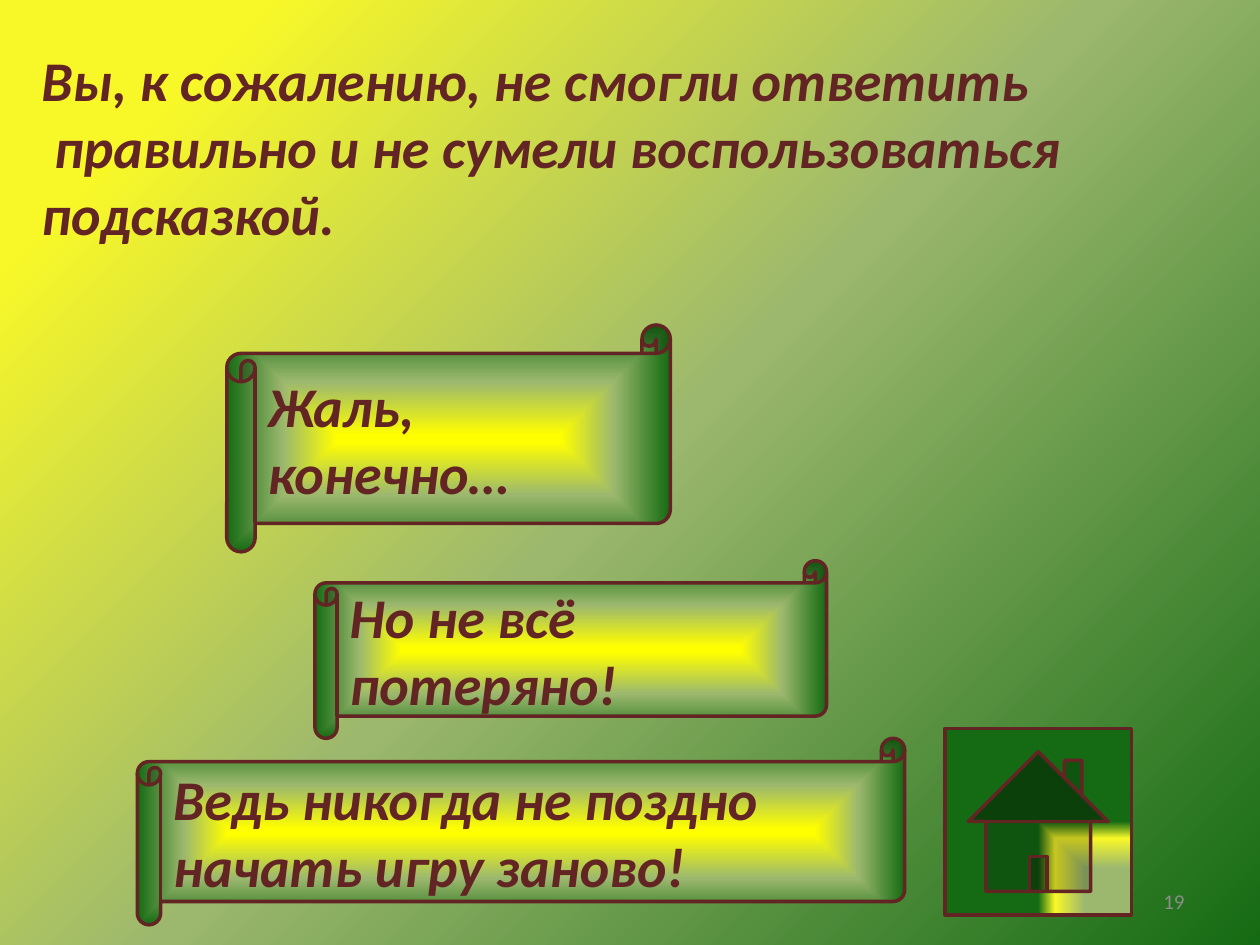
from dataclasses import dataclass
from typing import NamedTuple, Optional

from lxml.etree import SubElement
from pptx import Presentation
from pptx.dml.color import RGBColor
from pptx.enum.shapes import MSO_SHAPE as Preset
from pptx.enum.text import MSO_ANCHOR as Anchor, PP_ALIGN as Align
from pptx.oxml.ns import qn
from pptx.util import Emu, Pt

EMU_PER_PX = 9144  # 100 px to the inch


def px(length: int) -> Emu:
    return Emu(length * EMU_PER_PX)


class Box(NamedTuple):
    left: int
    top: int
    width: int
    height: int

    def emu(self) -> list[Emu]:
        return [px(side) for side in self]


class Stop(NamedTuple):
    percent: int
    color: str


@dataclass(frozen=True)
class Gradient:
    stops: tuple[Stop, ...]
    angle: int = 0
    shade: Optional[str] = None  # "rect" or "shape"; None is linear
    focus: tuple[int, ...] = ()  # left, top, right, bottom in percent


@dataclass(frozen=True)
class Theme:
    font: str = "Calibri"
    ink: str = "632523"
    muted: str = "8C8C8C"
    yellow: str = "F8F828"
    bright: str = "FFFF00"
    sage: str = "9CB86E"
    green: str = "156B13"
    message_size: int = 32
    number_size: int = 12
    outline: int = 2


@dataclass(frozen=True)
class Scroll:
    box: Box
    message: str


THEME = Theme()
SAGE, GREEN = Stop(50, THEME.sage), Stop(100, THEME.green)
BACKDROP = Gradient((Stop(12, THEME.yellow), SAGE, GREEN), angle=45)
PARCHMENT = Gradient((Stop(3, THEME.bright), SAGE, GREEN),
                     shade="shape", focus=(50, 50, 50, 50))
HOME_GLOW = Gradient((SAGE, Stop(82, THEME.yellow), GREEN),
                     shade="rect", focus=(100, 100, 0, 0))

HOME_BOX = Box(750, 578, 148, 148)
NUMBER_BOX = Box(717, 695, 233, 40)
VERDICT_BOX = Box(23, 31, 914, 172)
VERDICT = (
    "Вы, к сожалению, не смогли ответить",
    " правильно и не сумели воспользоваться",
    "подсказкой.",
)
SCROLLS = (
    Scroll(Box(109, 586, 609, 148), "Ведь никогда не поздно начать игру заново!"),
    Scroll(Box(180, 258, 352, 180), "Жаль, конечно…"),
    Scroll(Box(250, 445, 406, 141), "Но не всё потеряно!"),
)


def paint(fill, properties, gradient: Gradient) -> None:
    """Fill with any number of stops, linear or spreading from a focus."""
    fill.solid()
    solid = properties.find(qn("a:solidFill"))
    grad = SubElement(properties, qn("a:gradFill"), rotWithShape="1")
    properties.replace(solid, grad)
    stops = SubElement(grad, qn("a:gsLst"))
    for percent, color in gradient.stops:
        stop = SubElement(stops, qn("a:gs"), pos=str(percent * 1000))
        SubElement(stop, qn("a:srgbClr"), val=color)
    if gradient.shade is None:
        SubElement(grad, qn("a:lin"), ang=str(gradient.angle * 60000), scaled="0")
    else:
        spread = SubElement(grad, qn("a:path"), {"path": gradient.shade})
        edges = {side: str(value * 1000) for side, value in zip("ltrb", gradient.focus)}
        SubElement(spread, qn("a:fillToRect"), edges)


def write(frame, *lines: str, size: int = THEME.message_size, color: str = THEME.ink,
          strong: bool = True, align: Align = Align.LEFT,
          anchor: Anchor = Anchor.MIDDLE) -> None:
    frame.word_wrap = True
    frame.vertical_anchor = anchor
    for index, line in enumerate(lines):
        paragraph = frame.add_paragraph() if index else frame.paragraphs[0]
        paragraph.alignment = align
        run = paragraph.add_run()
        run.text = line
        font = run.font
        font.name, font.size = THEME.font, Pt(size)
        font.bold = font.italic = strong
        font.color.rgb = RGBColor.from_string(color)


def add_outlined(slide, preset: Preset, box: Box, gradient: Gradient):
    shape = slide.shapes.add_shape(preset, *box.emu())
    shape.shadow.inherit = False
    paint(shape.fill, shape.element.spPr, gradient)
    shape.line.color.rgb = RGBColor.from_string(THEME.ink)
    shape.line.width = Pt(THEME.outline)
    return shape


def add_scroll(slide, scroll: Scroll) -> None:
    shape = add_outlined(slide, Preset.HORIZONTAL_SCROLL, scroll.box, PARCHMENT)
    write(shape.text_frame, scroll.message)


def main() -> None:
    deck = Presentation()
    deck.slide_width, deck.slide_height = px(1000), px(750)
    slide = deck.slides.add_slide(deck.slide_layouts[6])

    # Background
    backdrop = slide.background.fill
    backdrop.solid()
    paint(backdrop, slide.element.find(".//" + qn("p:bgPr")), BACKDROP)

    # Home button and slide number
    add_outlined(slide, Preset.ACTION_BUTTON_HOME, HOME_BOX, HOME_GLOW)
    number = slide.shapes.add_textbox(*NUMBER_BOX.emu())
    write(number.text_frame, "19", size=THEME.number_size, color=THEME.muted,
          strong=False, align=Align.RIGHT)

    # Verdict
    verdict = slide.shapes.add_textbox(*VERDICT_BOX.emu())
    write(verdict.text_frame, *VERDICT, anchor=Anchor.TOP)

    # Scrolls with messages
    for scroll in SCROLLS:
        add_scroll(slide, scroll)

    deck.save("out.pptx")


if __name__ == "__main__":
    main()
